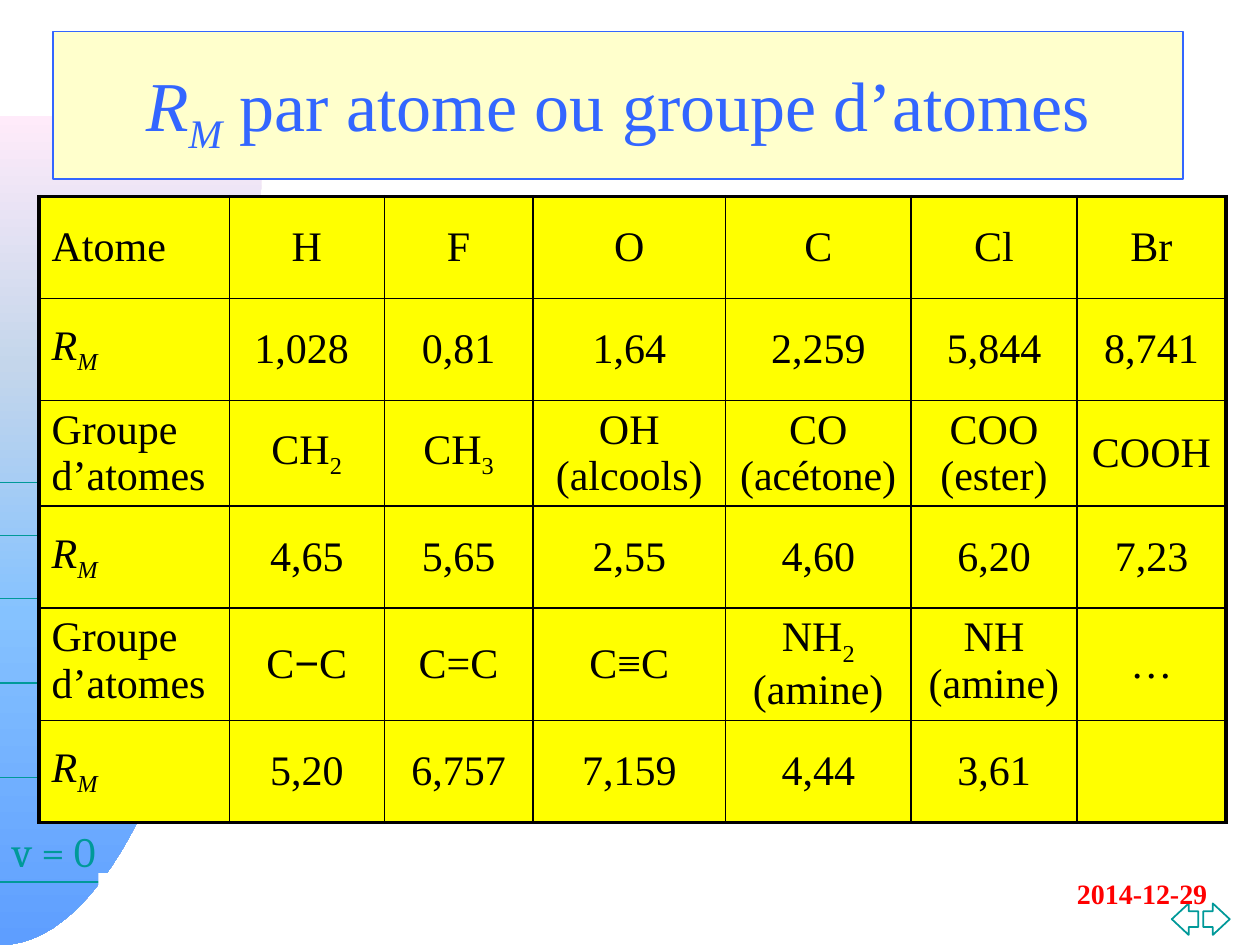
"""Slide with a table of molar refraction by atom or group of atoms."""
from itertools import groupby

from lxml import etree
from pptx import Presentation
from pptx import util as u
from pptx.dml.color import RGBColor
from pptx.enum import shapes, text
from pptx.oxml.ns import qn

W, H = 10, 7.5
SERIF = "Times New Roman"
COLORS = {"teal": "009999", "blue": "3366FF", "cream": "FFFFCC", "yellow": "FFFF00",
          "ink": "010000", "red": "FF0000", "white": "FFFFFF"}
SKY = [(0, "FFEBFA"), (30, "C4D6EB"), (60, "85C2FF"), (100, "5E9EFF")]
LEVELS = [(7, 0.83), (6.17, 1.25), (5.42, 1.5), (4.75, 1.67), (4.25, 1.75), (3.83, 1.83)]
COLS = [1.51, 1.23, 1.18, 1.53, 1.47, 1.32, 1.18]
ROW_H = 0.81
ROWS = [
    ["Atome", "H", "F", "O", "C", "Cl", "Br"],
    ["R_M", "1,028 ", "0,81", "1,64", "2,259", "5,844", "8,741"],
    ["Groupe d’atomes", "CH_2", "CH_3", "OH\n(alcools)", "CO (acétone)", "COO (ester)", "COOH"],
    ["R_M", "4,65", "5,65", "2,55", "4,60", "6,20", "7,23"],
    ["Groupe d’atomes", "C−C", "C=C", "C≡C", "NH_2\n(amine)", "NH\n(amine)", "…"],
    ["R_M", "5,20", "6,757", "7,159", "4,44", "3,61", ""],
]


def rgb(name):
    return RGBColor.from_string(COLORS[name])


def add_run(p, words, size, color, font=SERIF, italic=False, bold=False, sub=False):
    r = p.add_run()
    r.text = words
    f = r.font
    f.size, f.name, f.italic, f.bold = u.Pt(size), font, italic, bold
    f.color.rgb = rgb(color)
    if sub:
        r._r.get_or_add_rPr().set("baseline", "-25000")


def add_formula(p, formula, size, color):
    """Write text in which an underscore lowers the next character."""
    base, _, rest = formula.partition("_")
    italic = base == "R"
    for part, sub in ((base, False), (rest[:1], True), (rest[1:], False)):
        slanted = italic and (sub or part == base)
        for i, line in enumerate(part.split("\n")):
            if i:
                p.add_line_break()
            for minus, chars in groupby(line, lambda c: c == "−"):
                add_run(p, "".join(chars), size, color, "Arial" if minus else SERIF,
                        slanted, sub=sub)


def style(sp, fill, line=None, width=0.75):
    sp.shadow.inherit = False
    sp.fill.solid()
    sp.fill.fore_color.rgb = rgb(fill)
    if line:
        sp.line.color.rgb = rgb(line)
        sp.line.width = u.Pt(width)
    else:
        sp.line.fill.background()


def add_preset(s, kind, x, y, w, h, line=None):
    sp = s.shapes.add_shape(kind, *map(u.Inches, (x, y, w, h)))
    style(sp, "white", line, 1)
    return sp


def add_level(s, y, length):
    ln = s.shapes.add_connector(shapes.MSO_CONNECTOR.STRAIGHT, 0, u.Inches(y),
                                u.Inches(length), u.Inches(y))
    ln.line.color.rgb = rgb("teal")
    ln.line.width = u.Pt(0.75)
    etree.SubElement(ln._element.spPr, qn("a:effectLst"))


def add_label(s, words, x, y, w, h, size, color, font, wrap, align, bold=False):
    tf = s.shapes.add_textbox(*map(u.Inches, (x, y, w, h))).text_frame
    tf.word_wrap = wrap
    p = tf.paragraphs[0]
    p.alignment = align
    add_run(p, words, size, color, font, bold=bold)


def add_well(s, top=0.92, right=2.08, steps=40):
    """Draw the quarter well, its curve sampled from a cubic Bezier."""
    curve = []
    for i in range(steps + 1):
        t = i / steps
        a, b, c, d = (1 - t) ** 3, 3 * t * (1 - t) ** 2, 3 * t * t * (1 - t), t ** 3
        curve.append((1.15 * b + right * (c + d), H * (a + b) + 4.55 * c + top * d))
    points = [(u.Inches(x), u.Inches(y)) for x, y in curve + [(0, top)]]
    fb = s.shapes.build_freeform(*points[0])
    fb.add_line_segments(points[1:], close=True)
    sp = fb.convert_to_shape()
    style(sp, "white")
    sp.fill.gradient()
    sp.fill.gradient_angle = 270
    stops = sp._element.spPr.find(qn("a:gradFill")).find(qn("a:gsLst"))
    for gs in list(stops):
        stops.remove(gs)
    for pos, color in SKY:
        gs = etree.SubElement(stops, qn("a:gs"), pos=str(pos * 1000))
        etree.SubElement(gs, qn("a:srgbClr"), val=color)


def set_title(s, formula):
    sp = s.shapes.title
    sp._element.getparent().append(sp._element)
    sp.left, sp.top, sp.width, sp.height = map(u.Inches, (0.42, 0.25, 8.97, 1.17))
    style(sp, "cream", "blue")
    tf = sp.text_frame
    tf.word_wrap = True
    tf.vertical_anchor = text.MSO_ANCHOR.MIDDLE
    p = tf.paragraphs[0]
    p.alignment = text.PP_ALIGN.CENTER
    p.line_spacing = 0.9
    add_formula(p, formula, 40, "blue")


def set_borders(cell, outer):
    """Put a thick line on the sides in outer and a thin one on the others."""
    tcPr = cell._tc.get_or_add_tcPr()
    for i, side in enumerate("LRTB"):
        ln = etree.Element(qn(f"a:ln{side}"), w=str(u.Pt(2.25 if side in outer else 1)))
        fill = etree.SubElement(ln, qn("a:solidFill"))
        etree.SubElement(fill, qn("a:srgbClr"), val=COLORS["ink"])
        tcPr.insert(i, ln)


def add_values(s):
    tb = s.shapes.add_table(len(ROWS), len(COLS), u.Inches(0.31), u.Inches(1.56),
                            u.Inches(sum(COLS)), u.Inches(ROW_H * len(ROWS))).table
    for col, width in zip(tb.columns, COLS):
        col.width = u.Inches(width)
    for i, row in enumerate(ROWS):
        tb.rows[i].height = u.Inches(ROW_H)
        for j, words in enumerate(row):
            cell = tb.cell(i, j)
            cell.fill.solid()
            cell.fill.fore_color.rgb = rgb("yellow")
            two_lines = "\n" in words or " " in words.strip()
            cell.vertical_anchor = text.MSO_ANCHOR.TOP if two_lines else text.MSO_ANCHOR.MIDDLE
            p = cell.text_frame.paragraphs[0]
            p.alignment = text.PP_ALIGN.CENTER if j else text.PP_ALIGN.LEFT
            add_formula(p, words, 24, "ink")
            edges = {"L": j == 0, "R": j == len(COLS) - 1, "T": i == 0, "B": i == len(ROWS) - 1}
            set_borders(cell, [side for side, on in edges.items() if on])


def main():
    prs = Presentation()
    prs.slide_width, prs.slide_height = u.Inches(W), u.Inches(H)
    s = prs.slides.add_slide(prs.slide_layouts[5])
    kinds = shapes.MSO_SHAPE
    for kind, x in ((kinds.LEFT_ARROW, 9.3), (kinds.RIGHT_ARROW, 9.55)):
        arrow = add_preset(s, kind, x, 7.17, 0.21, 0.25, "teal")
        arrow.adjustments[1] = 0.638
    add_well(s)
    for y, length in LEVELS:
        add_level(s, y, length)
    add_label(s, "v = 0", 0, 6.5, 0.89, 0.5, 24, "teal", "Cambria", False, text.PP_ALIGN.LEFT)
    add_label(s, "2014-12-29", 8.15, 6.91, 1.53, 0.37, 16, "red", SERIF, True,
              text.PP_ALIGN.RIGHT, True)
    add_preset(s, kinds.RECTANGLE, 0.78, 6.93, 1.88, 0.37)
    set_title(s, "R_M par atome ou groupe d’atomes")
    add_values(s)
    prs.save("out.pptx")


if __name__ == "__main__":
    main()
